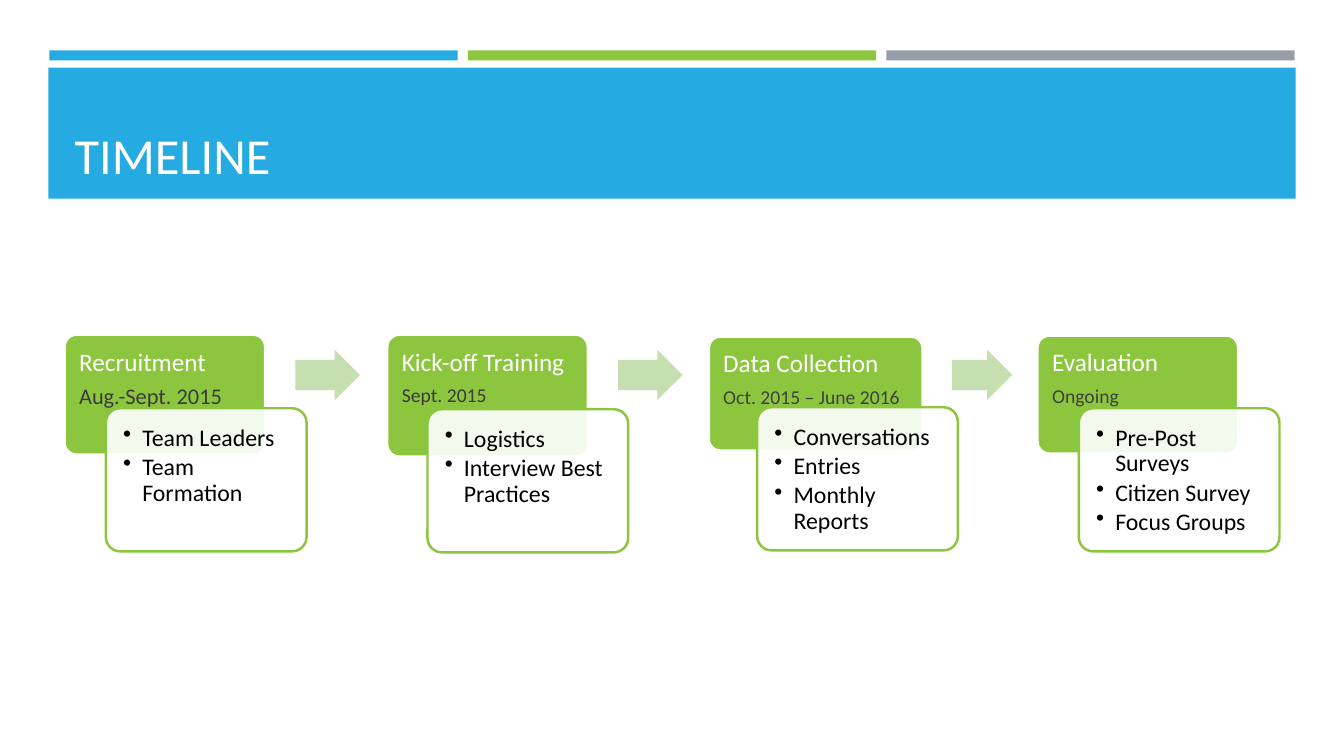
from pptx import Presentation
from pptx.dml.color import RGBColor
from pptx.enum.shapes import MSO_SHAPE
from pptx.enum.text import MSO_ANCHOR, MSO_AUTO_SIZE, PP_ALIGN
from pptx.oxml.ns import qn
from pptx.util import Inches, Pt
from lxml import etree

RECTANGLE = MSO_SHAPE.RECTANGLE
ROUNDED = MSO_SHAPE.ROUNDED_RECTANGLE
ARROW = MSO_SHAPE.RIGHT_ARROW
TOP, BOTTOM = MSO_ANCHOR.TOP, MSO_ANCHOR.BOTTOM
LEFT = PP_ALIGN.LEFT
NO_AUTOFIT = MSO_AUTO_SIZE.NONE

BLUE = RGBColor(0x25, 0xAA, 0xE1)
GREEN = RGBColor(0x8C, 0xC6, 0x3F)
GRAY = RGBColor(0x96, 0x9F, 0xA7)
PALE_GREEN = RGBColor(0xC5, 0xDF, 0xB0)
WHITE = RGBColor(0xFF, 0xFF, 0xFF)
BLACK = RGBColor(0, 0, 0)
DARK = RGBColor(0x3B, 0x3B, 0x3B)
CHARCOAL = RGBColor(0x40, 0x40, 0x40)
FONT = "Calibri"

TITLE = "TIMELINE"
STRIPES = [BLUE, GREEN, GRAY]
PHASES = [
    {"name": "Recruitment", "date": "Aug.-Sept. 2015", "date_size": 16, "date_color": DARK,
     "header": (0.64, 3.32, 1.99, 1.19), "tasks_at": (1.05, 4.05),
     "tasks": ["Team Leaders", "Team Formation"]},
    {"name": "Kick-off Training", "date": "Sept. 2015", "date_size": 14, "date_color": DARK,
     "header": (3.84, 3.32, 1.99, 1.21), "tasks_at": (4.24, 4.06),
     "tasks": ["Logistics", "Interview Best Practices"]},
    {"name": "Data Collection", "date": "Oct. 2015 – June 2016", "date_size": 14, "date_color": CHARCOAL,
     "header": (7.03, 3.34, 2.12, 1.13), "tasks_at": (7.51, 4.04),
     "tasks": ["Conversations", "Entries", "Monthly Reports"]},
    {"name": "Evaluation", "date": "Ongoing", "date_size": 14, "date_color": CHARCOAL,
     "header": (10.29, 3.33, 1.99, 1.17), "tasks_at": (10.7, 4.05),
     "tasks": ["Pre-Post Surveys", "Citizen Survey", "Focus Groups"]},
]
ARROWS = [(2.93, 0.64), (6.13, 0.64), (9.44, 0.6)]
TASKS_SIZE = (1.99, 1.42)
CORNER = 0.1


def set_all(target, values):
    for name, value in values.items():
        setattr(target, name, value)


def add_block(kind, box, fill, outline=None):
    block = slide.shapes.add_shape(kind, *map(Inches, box))
    block.shadow.inherit = False
    block.fill.solid()
    block.fill.fore_color.rgb = fill
    if outline is None:
        block.line.fill.background()
    else:
        block.line.color.rgb = outline
        block.line.width = Pt(1.75)
    return block


def write_lines(block, inset, lines, space_ratio):
    frame = block.text_frame
    set_all(frame, {"word_wrap": True, "vertical_anchor": TOP,
                    "margin_left": Inches(inset), "margin_right": Inches(inset),
                    "margin_top": Inches(inset), "margin_bottom": Inches(inset)})
    for index, (text, size, color) in enumerate(lines):
        paragraph = frame.paragraphs[0] if index == 0 else frame.add_paragraph()
        paragraph.text = text
        set_all(paragraph, {"alignment": LEFT, "line_spacing": 0.9,
                            "space_after": Pt(size * space_ratio)})
        set_all(paragraph.font, {"name": FONT, "size": Pt(size)})
        paragraph.font.color.rgb = color
    return frame.paragraphs


def add_bullet(paragraph):
    properties = paragraph._p.get_or_add_pPr()
    properties.set("marL", str(Inches(0.19)))
    properties.set("indent", str(-Inches(0.19)))
    bullet = etree.Element(qn("a:buChar"), char="•")
    properties.insert_element_before(bullet, "a:tabLst", "a:defRPr", "a:extLst")


def set_opacity(block, percent):
    color = block.fill._xPr.find(qn("a:solidFill"))[0]
    etree.SubElement(color, qn("a:alpha"), val=str(percent * 1000))


prs = Presentation()
prs.slide_width, prs.slide_height = Inches(13.33), Inches(7.5)
slide = prs.slides.add_slide(prs.slide_layouts[5])

for column, color in enumerate(STRIPES):
    add_block(RECTANGLE, (0.49 + 4.15 * column, 0.5, 4.05, 0.1), color)
banner = add_block(RECTANGLE, (0.48, 0.67, 12.37, 1.3), BLUE)

title = slide.shapes.title
banner._element.addnext(title._element)
set_all(title, {"left": Inches(0.64), "top": Inches(0.77),
                "width": Inches(12.06), "height": Inches(1.11)})
title.text = TITLE
set_all(title.text_frame, {"vertical_anchor": BOTTOM, "auto_size": NO_AUTOFIT})
heading = title.text_frame.paragraphs[0]
heading.alignment = LEFT
set_all(heading.font, {"name": FONT, "size": Pt(36)})
heading.font.color.rgb = WHITE

for phase in PHASES:
    header = add_block(ROUNDED, phase["header"], GREEN, WHITE)
    header.adjustments[0] = CORNER
    write_lines(header, 0.11, [(phase["name"], 18, WHITE),
                               (phase["date"], phase["date_size"], phase["date_color"])], 0.35)
    card = add_block(ROUNDED, phase["tasks_at"] + TASKS_SIZE, WHITE, GREEN)
    card.adjustments[0] = CORNER
    set_opacity(card, 90)
    for task in write_lines(card, 0.13, [(text, 17, BLACK) for text in phase["tasks"]], 0.15):
        add_bullet(task)

for left, width in ARROWS:
    arrow = add_block(ARROW, (left, 3.47, width, 0.5), PALE_GREEN)
    arrow.adjustments[0] = 0.6
    arrow.adjustments[1] = 0.5

prs.save("out.pptx")
